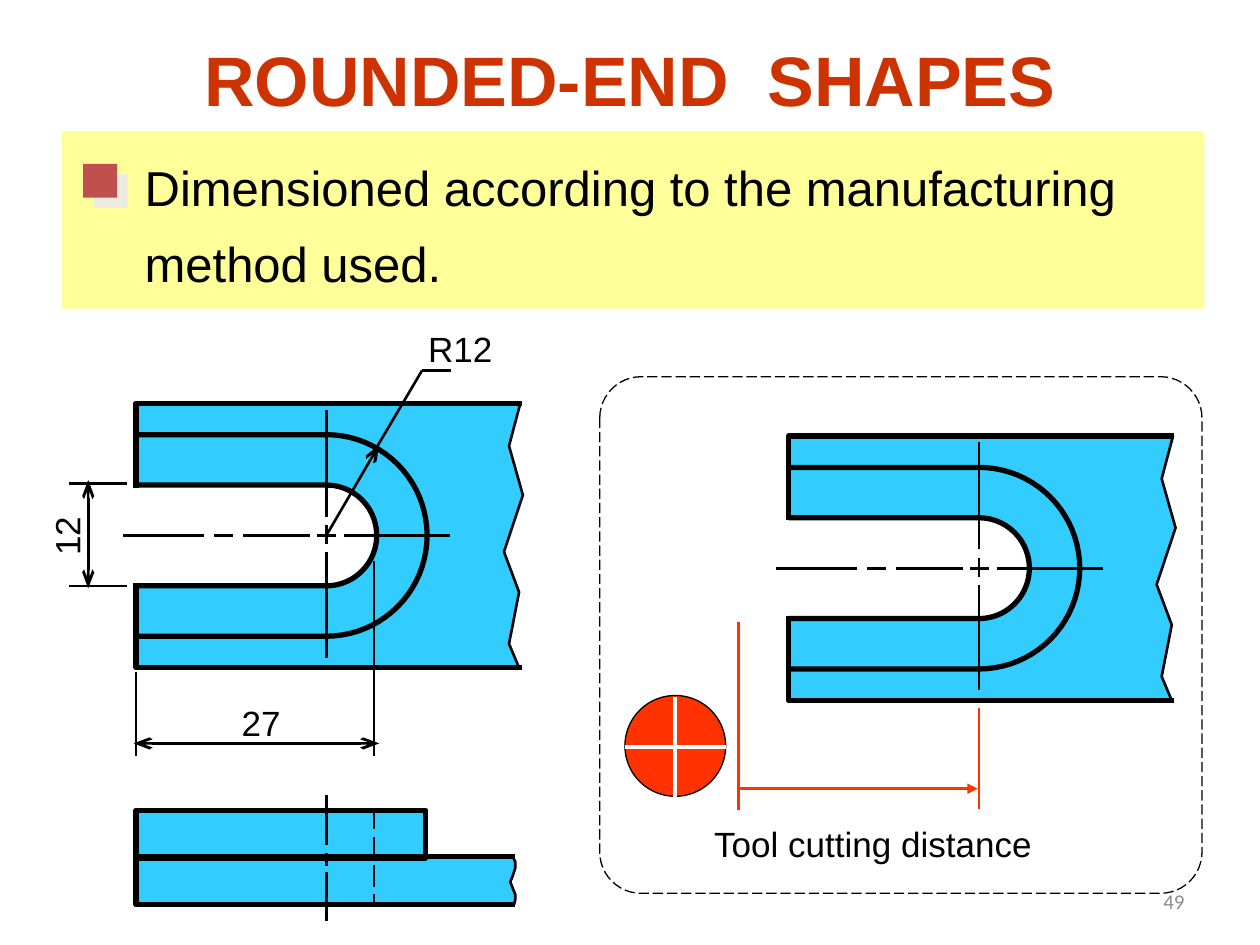
"""Build a slide on dimensioning rounded-end shapes."""
from dataclasses import dataclass
from math import cos, pi, sin

from lxml.etree import SubElement as Sub
from pptx import Presentation as Deck
from pptx.dml.color import RGBColor as Rgb
from pptx.enum.dml import MSO_LINE as Dash
from pptx.enum.shapes import MSO_CONNECTOR as Conn, MSO_SHAPE as Kind
from pptx.enum.text import MSO_ANCHOR as Anchor, PP_ALIGN as Align
from pptx.oxml.ns import qn
from pptx.util import Inches, Pt


@dataclass(frozen=True)
class Theme:
    """Colours, fonts and sizes of the slide."""
    ink: str = "000000"
    paper: str = "FFFFFF"
    steel: str = "33CCFF"
    red: str = "FF3300"
    title: str = "CC3300"
    band: str = "FFFF99"
    mark: str = "C0504D"
    shade: str = "EEECE1"
    grey: str = "8C8C8C"
    face: str = "Arial"
    foot: str = "Calibri"
    head: int = 40
    body: int = 28
    note: int = 20
    small: int = 12
    bold: float = 3
    cross: float = 2.25
    thin: float = 1.5
    hair: float = 0.75


class Sketch:
    """Draw styled elements on the current slide."""

    def __init__(self, slide, theme):
        self.shapes, self.theme = slide.shapes, theme

    def stroke(self, item, color, width, dash=None):
        item.line.color.rgb = Rgb.from_string(color)
        item.line.width = Pt(width)
        if dash:
            item.line.dash_style = dash

    def paint(self, item, fill, color, width, dash=None):
        item.shadow.inherit = False
        if fill:
            item.fill.solid()
            item.fill.fore_color.rgb = Rgb.from_string(fill)
        else:
            item.fill.background()
        if color:
            self.stroke(item, color, width, dash)
        else:
            item.line.fill.background()
        return item

    def shape(self, kind, box, fill=None, color=None, width=1, dash=None):
        item = self.shapes.add_shape(kind, *map(Inches, box))
        return self.paint(item, fill, color, width, dash)

    def trace(self, spots, fill=None, color=None, width=1):
        spots = [(Inches(x), Inches(y)) for x, y in spots]
        pen = self.shapes.build_freeform(*spots[0])
        pen.add_line_segments(spots[1:], close=fill is not None)
        return self.paint(pen.convert_to_shape(), fill, color, width)

    def wire(self, x1, y1, x2, y2, color=None, width=None, dash=None, tips=None):
        ends = map(Inches, (x1, y1, x2, y2))
        item = self.shapes.add_connector(Conn.STRAIGHT, *ends)
        self.stroke(item, color or self.theme.ink, width or self.theme.thin, dash)
        props = item._element.spPr
        for end, (form, size) in (tips or {}).items():
            Sub(props.find(qn("a:ln")), qn(f"a:{end}"), type=form, w="med", len=size)
        Sub(props, qn("a:effectLst"))

    def text(self, box, lines, size, color=None, face=None, bold=False, wrap=False,
             align=Align.LEFT, anchor=Anchor.TOP, space=None, turn=0):
        item = self.shapes.add_textbox(*map(Inches, box))
        item.rotation = turn
        frame = item.text_frame
        frame.word_wrap, frame.vertical_anchor = wrap, anchor
        for num, line in enumerate(lines):
            para = frame.add_paragraph() if num else frame.paragraphs[0]
            para.alignment, para.line_spacing = align, space
            run = para.add_run()
            run.text = line
            font = run.font
            font.name, font.size, font.bold = face or self.theme.face, Pt(size), bold
            font.color.rgb = Rgb.from_string(color or self.theme.ink)

    def plate(self, x, y):
        look = self.theme
        left, half = -1.51, 1.05
        edge = [(1.54, -half), (1.45, -.71), (1.56, -.32), (1.41, .13),
                (1.53, .45), (1.45, .86), (1.53, half)]

        def move(spots):
            return [(x + a, y + b) for a, b in spots]

        def bend(rad):
            turns = [pi * (k / 40 - .5) for k in range(41)]
            arc = [(rad * cos(t), rad * sin(t)) for t in turns]
            return move([(left, -rad), *arc, (left, rad)])

        self.trace(move([(left, half), (left, -half), *edge]), look.steel)
        self.trace(bend(.8), color=look.ink, width=look.bold)
        self.shape(Kind.RECTANGLE, (x + left - .02, y - .4, .1, .8), look.paper)
        self.trace(bend(.4), look.paper)
        self.trace(bend(.4), color=look.ink, width=look.bold)
        self.trace(move(edge), color=look.ink, width=look.thin)
        for side in (-1, 1):
            rim = [(left, .38 * side), (left, half * side), (1.55, half * side)]
            self.trace(move(rim), color=look.ink, width=look.bold)
        for a, b in ((-1.61, -.97), (-.89, -.74), (-.66, -.13), (-.07, .08), (.14, .98)):
            self.wire(x + a, y, x + b, y)
        for a, b in ((-1, -.15), (-.08, .07), (.13, .97)):
            self.wire(x, y + a, x, y + b)

    def bullet(self, box):
        item = self.shape(Kind.RECTANGLE, box, self.theme.mark)
        glow = Sub(item._element.spPr.find(qn("a:effectLst")), qn("a:outerShdw"),
                   dist=str(Pt(8.5)), dir="2700000", algn="ctr", rotWithShape="0")
        Sub(glow, qn("a:srgbClr"), val=self.theme.shade)


def main():
    deck = Deck()
    deck.slide_width, deck.slide_height = Inches(10), Inches(7.5)
    look = Theme()
    art = Sketch(deck.slides.add_slide(deck.slide_layouts[6]), look)
    tip = ("arrow", "lg")
    both = {"headEnd": tip, "tailEnd": tip}

    art.text((.75, 0, 8.5, 1.25), ["ROUNDED-END  SHAPES"], look.head, look.title,
             bold=True, wrap=True, align=Align.CENTER, anchor=Anchor.MIDDLE)
    art.shape(Kind.RECTANGLE, (.49, 1.04, 9.07, 1.41), look.band)
    art.text((1.05, 1.06, 8.12, 1.26),
             ["Dimensioned according to the manufacturing", "method used."],
             look.body, wrap=True, space=1.3)
    art.bullet((.66, 1.3, .27, .27))

    art.plate(2.59, 4.25)
    art.wire(2.59, 4.25, 3.01, 3.53, tips={"tailEnd": tip})
    art.wire(2.99, 3.55, 3.35, 2.94)
    art.wire(3.35, 2.94, 3.58, 2.94)
    art.text((3.3, 2.55, .71, .43), ["R12"], look.note)
    art.wire(1.08, 5.33, 1.08, 6)
    art.wire(2.97, 4.45, 2.97, 6)
    art.wire(1.06, 5.9, 3.01, 5.9, tips=both)
    art.text((1.82, 5.52, .51, .43), ["27"], look.note)
    for y in (3.84, 4.65):
        art.wire(1.01, y, .55, y)
    art.wire(.7, 4.67, .7, 3.81, tips=both)
    art.text((.27, 4.04, .51, .43), ["12"], look.note, turn=270)

    wave = [(4.07, 6.8), (4.09, 6.84), (4.09, 6.89), (4.07, 6.95), (4.05, 7),
            (4.07, 7.05), (4.09, 7.1), (4.09, 7.14), (4.08, 7.18)]
    art.trace([(1.08, 7.18), (1.08, 6.8), *wave], look.steel)
    art.shape(Kind.RECTANGLE, (1.08, 6.43, 2.3, .38), look.steel, look.ink, look.bold)
    art.trace([(4.09, 7.18), (1.08, 7.18), (1.08, 6.8), (4.09, 6.8)],
              color=look.ink, width=look.bold)
    art.trace(wave, color=look.ink, width=look.thin)
    for top, end in ((6.31, 6.71), (6.77, 6.87), (6.92, 7.31)):
        art.wire(2.59, top, 2.59, end)
    art.wire(2.97, 6.41, 2.97, 7.18, dash=Dash.LONG_DASH)

    frame = art.shape(Kind.ROUNDED_RECTANGLE, (4.76, 2.99, 4.78, 4.1),
                      None, look.ink, look.hair, Dash.LONG_DASH)
    frame.adjustments[0] = .08
    art.plate(7.77, 4.51)
    art.shape(Kind.OVAL, (4.96, 5.52, .8, .8), look.red, look.ink, look.hair)
    art.wire(5.36, 5.53, 5.36, 6.33, look.paper, look.cross)
    art.wire(4.96, 5.93, 5.76, 5.93, look.paper, look.cross)
    art.wire(5.86, 4.94, 5.86, 6.43, look.red)
    art.wire(7.77, 5.62, 7.77, 6.42, look.red)
    art.wire(5.85, 6.26, 7.76, 6.26, look.red, tips={"tailEnd": ("triangle", "med")})
    art.text((5.57, 6.48, 2.75, .43), ["Tool cutting distance"], look.note)
    art.text((7.17, 6.95, 2.33, .4), ["49"], look.small, look.grey, look.foot,
             wrap=True, align=Align.RIGHT, anchor=Anchor.MIDDLE)
    deck.save("out.pptx")


if __name__ == "__main__":
    main()
